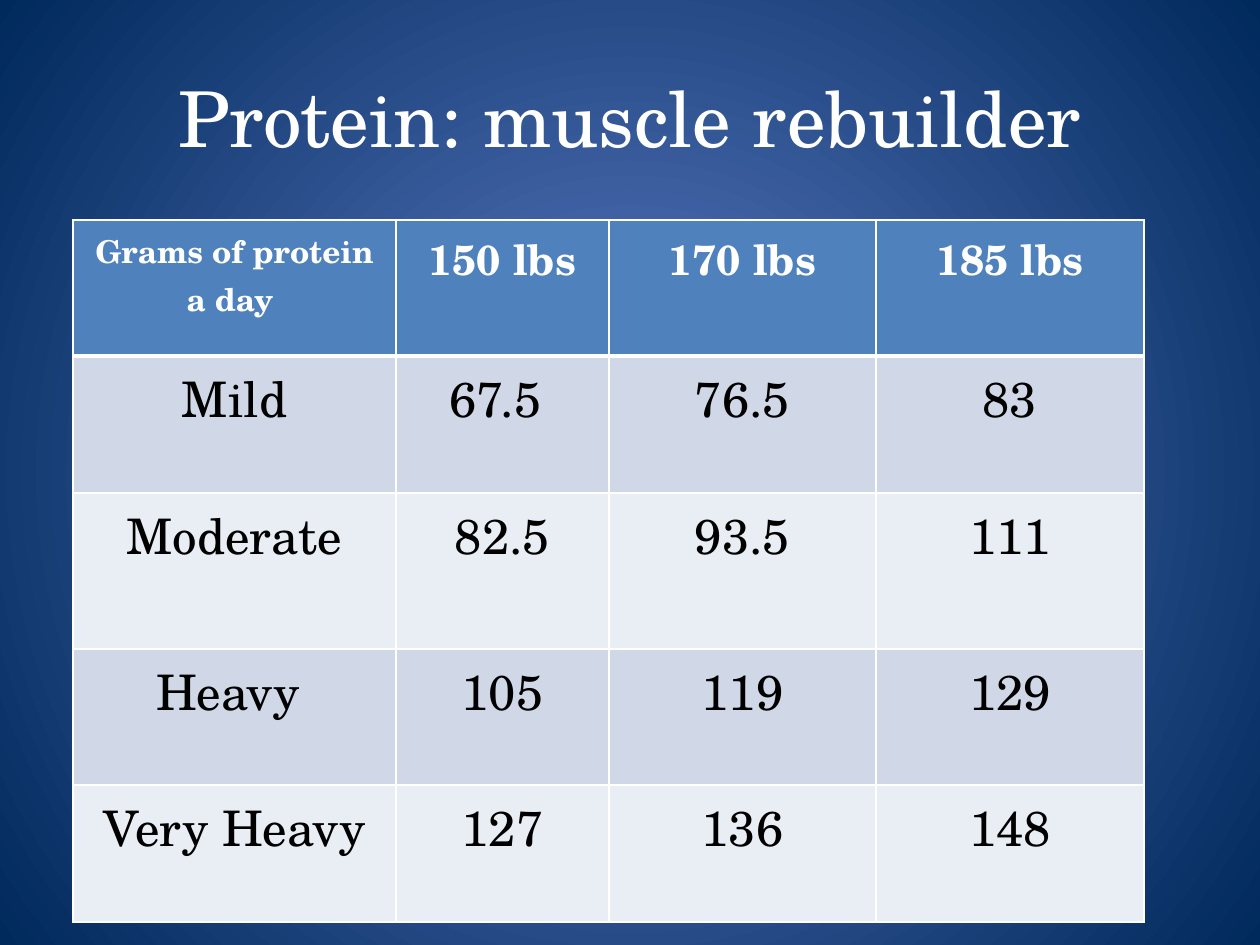
"""Build the protein slide: a title over a table of grams a day."""
from lxml import etree
from pptx import Presentation
from pptx.dml.color import RGBColor
from pptx.enum.text import MSO_ANCHOR, PP_ALIGN
from pptx.oxml.ns import qn
from pptx.util import Pt

MIDDLE = MSO_ANCHOR.MIDDLE
CENTER = PP_ALIGN.CENTER
PX = 914400 // 126
FONT = "TeX Gyre Schola"
WHITE = "FFFFFF"


def color(code):
    return RGBColor.from_string(code)


def write(frame, text, size, code, bold=False):
    frame.word_wrap = True
    line = frame.paragraphs[0]
    line.text = text
    line.alignment = CENTER
    line.font.name = FONT
    line.font.size = Pt(size)
    line.font.bold = bold
    line.font.color.rgb = color(code)


deck = Presentation()
deck.slide_width, deck.slide_height = 1260 * PX, 945 * PX
slide = deck.slides.add_slide(deck.slide_layouts[6])

back = slide.background.fill
back.gradient()
for stop, code in zip(back.gradient_stops, ["5E7CC5", "00295C"]):
    stop.color.rgb = color(code)
grad = slide.element.find(".//" + qn("a:gradFill"))
grad.remove(grad.find(qn("a:lin")))
shade = etree.SubElement(grad, qn("a:path"), path="circle")
etree.SubElement(shade, qn("a:fillToRect"), l="50000", t="50000", r="50000", b="50000")

title = slide.shapes.add_textbox(63 * PX, 38 * PX, 1134 * PX, 157 * PX).text_frame
title.vertical_anchor = MIDDLE
write(title, "Protein: muscle rebuilder", 44, WHITE)

rows = [
    ["Grams of protein a day ", "150 lbs", "170 lbs", "185 lbs"],
    ["Mild", "67.5 ", "76.5", "83"],
    ["Moderate", "82.5", "93.5", "111"],
    ["Heavy ", "105", "119", "129"],
    ["Very Heavy", "127", "136", "148"],
]
wides = [323, 213, 267, 268]
talls = [136, 137, 156, 136, 137]
fills = ["4F81BD", "D0D8E8", "E9EDF4", "D0D8E8", "E9EDF4"]

table = slide.shapes.add_table(
    len(rows), len(wides), 73 * PX, 220 * PX, sum(wides) * PX, sum(talls) * PX
).table
for col, wide in zip(table.columns, wides):
    col.width = wide * PX
for r, (row, tall, fill) in enumerate(zip(rows, talls, fills)):
    table.rows[r].height = tall * PX
    head = r == 0
    for c, text in enumerate(row):
        cell = table.cell(r, c)
        size = 28 if not head else 24 if c else 18
        write(cell.text_frame, text, size, WHITE if head else "000000", head)
        props = cell._tc.get_or_add_tcPr()
        for side in ["lnL", "lnR", "lnT", "lnB"]:
            thick = (side == "lnB" and head) or (side == "lnT" and r == 1)
            edge = etree.SubElement(props, qn("a:" + side), w=str(Pt(3 if thick else 1)))
            solid = etree.SubElement(edge, qn("a:solidFill"))
            etree.SubElement(solid, qn("a:srgbClr"), val=WHITE)
        cell.fill.solid()
        cell.fill.fore_color.rgb = color(fill)

deck.save("out.pptx")
